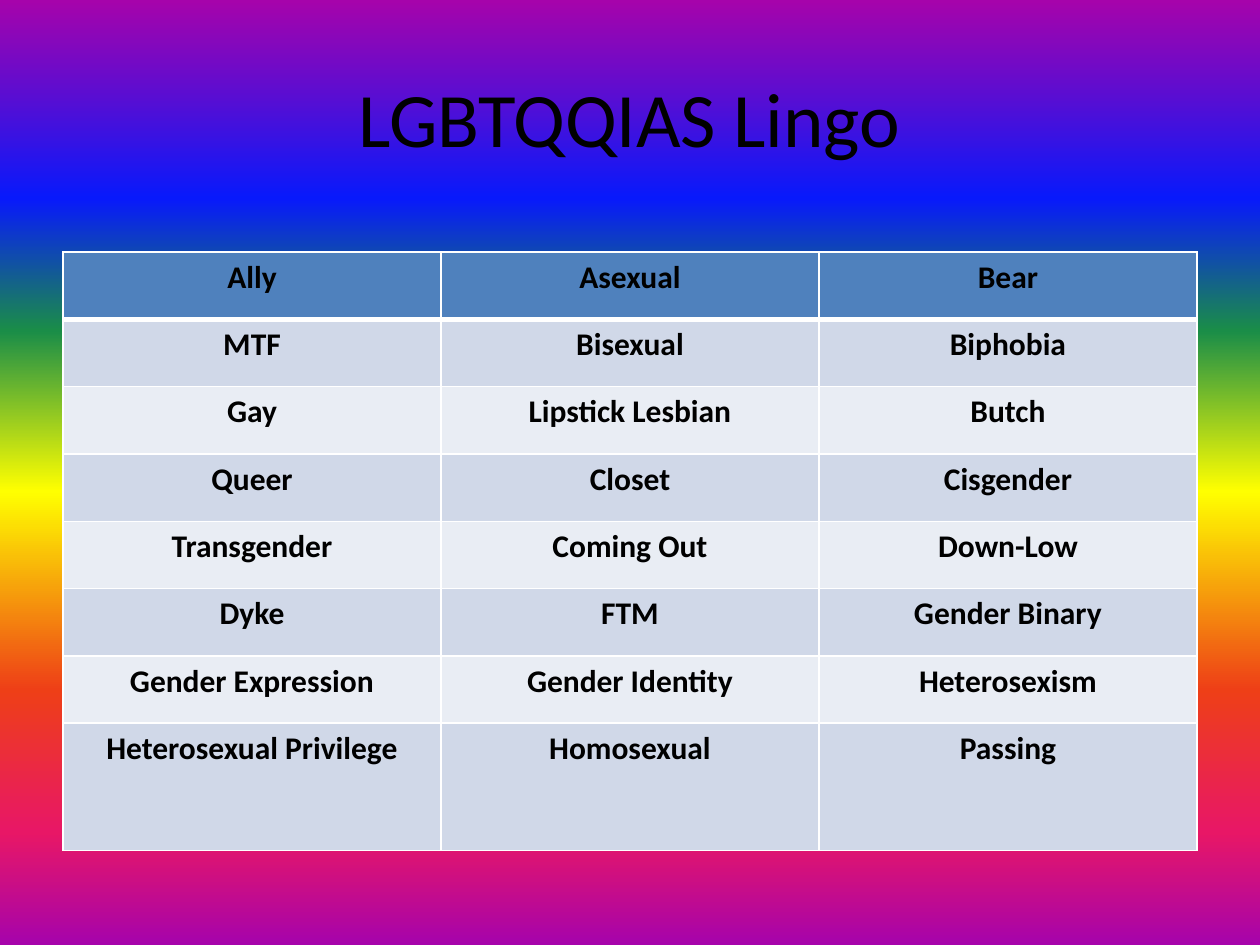
from typing import NamedTuple

from lxml import etree
from pptx import Presentation
from pptx.dml.color import RGBColor
from pptx.enum.text import MSO_ANCHOR, PP_ALIGN
from pptx.oxml.ns import qn
from pptx.util import Inches, Pt

CENTER = PP_ALIGN.CENTER
MIDDLE = MSO_ANCHOR.MIDDLE
TITLE_ONLY = 5

FONT = "Calibri"
BLACK, WHITE = "000000", "FFFFFF"
HEADER_FILL = "4F81BD"
BAND_FILLS = ("D0D8E8", "E9EDF4")


class Stop(NamedTuple):
    percent: int
    color: str


RAINBOW = (
    Stop(0, "A603AB"), Stop(21, "0819FB"), Stop(35, "1A8D48"), Stop(52, "FFFF00"),
    Stop(73, "EE3F17"), Stop(88, "E81766"), Stop(100, "A603AB"),
)

TERMS = (
    ("Ally", "Asexual", "Bear"),
    ("MTF", "Bisexual", "Biphobia"),
    ("Gay", "Lipstick Lesbian", "Butch"),
    ("Queer", "Closet", "Cisgender"),
    ("Transgender", "Coming Out", "Down-Low"),
    ("Dyke", "FTM", "Gender Binary"),
    ("Gender Expression", "Gender Identity", "Heterosexism"),
    ("Heterosexual Privilege", "Homosexual", "Passing"),
)

# Layout in inches
SLIDE_W, SLIDE_H = 10, 7.5
MARGIN = SLIDE_W / 20
CONTENT_W = SLIDE_W - 2 * MARGIN
TITLE_TOP, TITLE_H = 0.3, 1.25
TABLE_TOP, TABLE_H = 2, 4.75
LAST_ROW_H = 1.01
ROW_H = (TABLE_H - LAST_ROW_H) / (len(TERMS) - 1)


def rgb(color: str) -> RGBColor:
    return RGBColor.from_string(color)


def format_text(paragraph, size: float, bold: bool) -> None:
    paragraph.alignment = CENTER
    font = paragraph.font
    font.name, font.size, font.bold = FONT, Pt(size), bold
    font.color.rgb = rgb(BLACK)


def paint_background(slide, stops: tuple[Stop, ...]) -> None:
    fill = slide.background.fill
    fill.gradient()
    fill.gradient_angle = 270
    stop_list = next(slide.element.iter(qn("a:gsLst")))
    for default_stop in list(stop_list):
        stop_list.remove(default_stop)
    for stop in stops:
        entry = etree.SubElement(stop_list, qn("a:gs"), pos=str(stop.percent * 1000))
        etree.SubElement(entry, qn("a:srgbClr"), val=stop.color)


def add_border(cell, side: str, width: float) -> None:
    properties = cell._tc.get_or_add_tcPr()
    line = etree.SubElement(properties, qn(f"a:ln{side}"), w=str(Pt(width)))
    solid = etree.SubElement(line, qn("a:solidFill"))
    etree.SubElement(solid, qn("a:srgbClr"), val=WHITE)


def fill_cell(cell, term: str, row: int) -> None:
    cell.text = term
    format_text(cell.text_frame.paragraphs[0], 18, True)
    # The rule under the header is heavier than the others
    widths = {"L": 1, "R": 1, "T": 3 if row == 1 else 1, "B": 3 if row == 0 else 1}
    for side, width in widths.items():
        add_border(cell, side, width)
    cell.fill.solid()
    cell.fill.fore_color.rgb = rgb(BAND_FILLS[(row - 1) % 2] if row else HEADER_FILL)


def add_title(slide, wording: str) -> None:
    title = slide.shapes.title
    title.left, title.top = Inches(MARGIN), Inches(TITLE_TOP)
    title.width, title.height = Inches(CONTENT_W), Inches(TITLE_H)
    title.text_frame.text = wording
    title.text_frame.vertical_anchor = MIDDLE
    format_text(title.text_frame.paragraphs[0], 44, False)


def add_terms(slide, terms: tuple[tuple[str, ...], ...]) -> None:
    table = slide.shapes.add_table(
        len(terms), len(terms[0]), Inches(MARGIN), Inches(TABLE_TOP),
        Inches(CONTENT_W), Inches(TABLE_H),
    ).table
    for row, row_terms in enumerate(terms):
        is_last = row == len(terms) - 1
        table.rows[row].height = Inches(LAST_ROW_H if is_last else ROW_H)
        for column, term in enumerate(row_terms):
            fill_cell(table.cell(row, column), term, row)


def main() -> None:
    deck = Presentation()
    deck.slide_width, deck.slide_height = Inches(SLIDE_W), Inches(SLIDE_H)
    slide = deck.slides.add_slide(deck.slide_layouts[TITLE_ONLY])
    paint_background(slide, RAINBOW)
    add_title(slide, "LGBTQQIAS Lingo")
    add_terms(slide, TERMS)
    deck.save("out.pptx")


if __name__ == "__main__":
    main()
